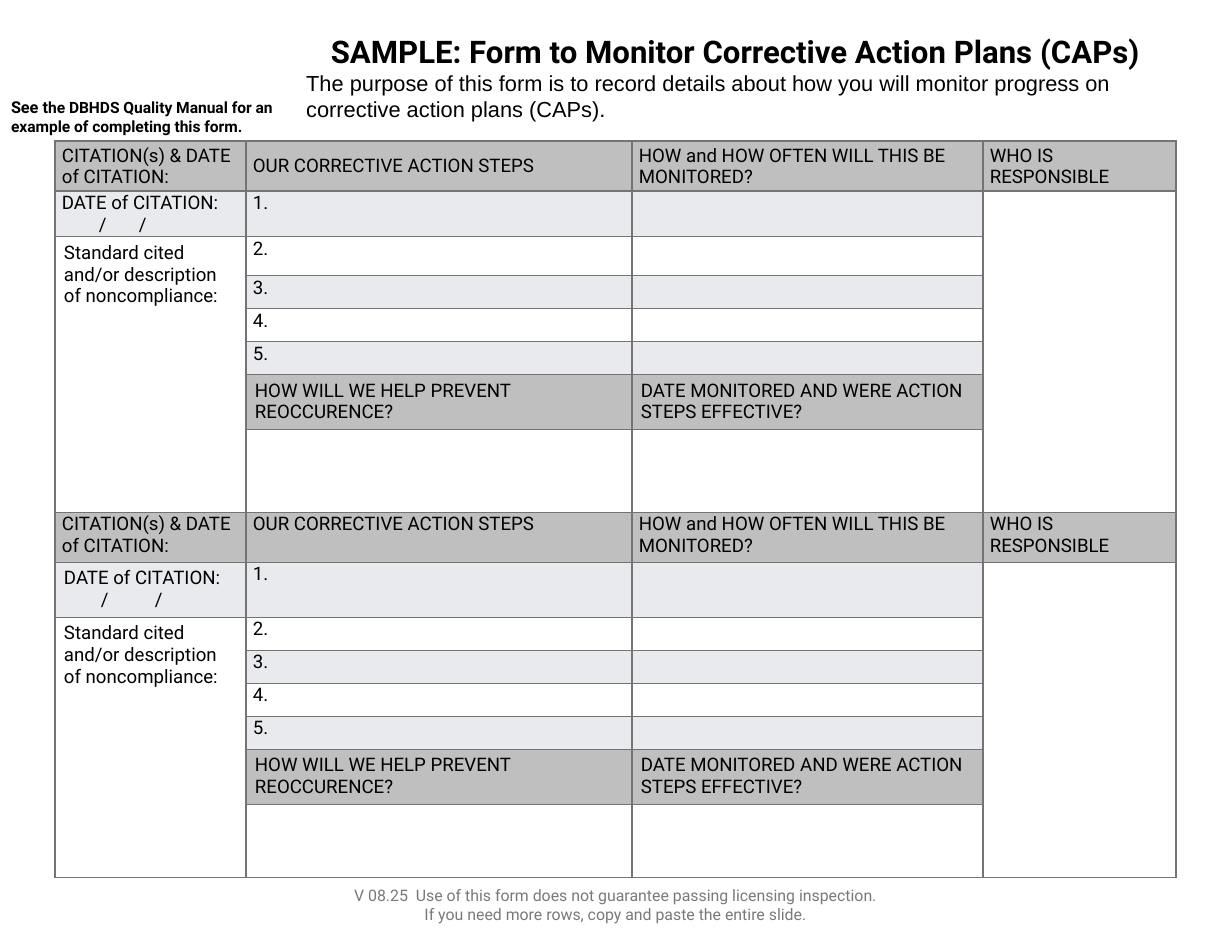
from lxml.etree import SubElement
from pptx import Presentation
from pptx.dml.color import RGBColor
from pptx.enum.text import MSO_ANCHOR as Anchor, MSO_AUTO_SIZE as Auto, PP_ALIGN as Align
from pptx.oxml.ns import qn
from pptx.util import Pt

SCALE = 914400 / 112
BLACK = RGBColor(0x00, 0x00, 0x00)
WHITE = RGBColor(0xFF, 0xFF, 0xFF)
HEAD = RGBColor(0xBF, 0xBF, 0xBF)
BAND = RGBColor(0xE8, 0xEA, 0xED)
GREY = RGBColor(0x79, 0x79, 0x79)
EDGE = RGBColor(0x74, 0x74, 0x74)

COLS = [191, 386, 351, 193]
# Header, five steps, prevention header, blank row
BLOCKS = [[50, 45, 39, 33, 33, 33, 54, 83], [50, 53, 33, 33, 33, 33, 55, 73]]
HEADERS = ["CITATION(s) & DATE of CITATION:", "OUR CORRECTIVE ACTION STEPS",
           "HOW and HOW OFTEN WILL THIS BE MONITORED?", "WHO IS RESPONSIBLE"]
CHECKS = ["HOW WILL WE HELP PREVENT REOCCURENCE?",
          "DATE MONITORED AND WERE ACTION STEPS EFFECTIVE?"]
TIGHT = (7, 1, 7, 0)
LOOSE = (9, 5, 9, 5)


def px(n):
    return int(n * SCALE)


def style(para, size, color=BLACK, bold=False, name="Roboto", align=Align.LEFT):
    para.alignment = align
    font = para.font
    font.size, font.bold, font.name = Pt(size), bold, name
    font.color.rgb = color


def add_tabs(para, stops):
    tabs = SubElement(para._p.get_or_add_pPr(), qn("a:tabLst"))
    for stop in stops:
        SubElement(tabs, qn("a:tab"), pos=str(px(stop)), algn="l")


def add_title(slide, x, y, w, h):
    title = slide.shapes.title
    title.left, title.top, title.width, title.height = map(px, (x, y, w, h))
    frame = title.text_frame
    frame.word_wrap = True
    frame.auto_size = Auto.NONE
    frame.vertical_anchor = Anchor.TOP
    head = frame.paragraphs[0]
    head.text = "SAMPLE: Form to Monitor Corrective Action Plans (CAPs)"
    style(head, 20, bold=True, align=Align.CENTER)
    aim = frame.add_paragraph()
    aim.text = ("The purpose of this form is to record details about how you will "
                "monitor progress on corrective action plans (CAPs).")
    style(aim, 14, name="Arial")


def add_box(slide, x, y, w, h):
    frame = slide.shapes.add_textbox(*map(px, (x, y, w, h))).text_frame
    frame.word_wrap = True
    return frame


def add_note(slide, x, y, w, h):
    para = add_box(slide, x, y, w, h).paragraphs[0]
    style(para, 10, bold=True)
    start = para.add_run()
    start.text = "See t"
    start.font.size = Pt(10.5)
    para.add_run().text = "he DBHDS Quality Manual for an example of completing this form."


def add_footer(slide, x, y, w, h):
    frame = add_box(slide, x, y, w, h)
    frame.vertical_anchor = Anchor.MIDDLE
    frame.text = ("V 08.25  Use of this form does not guarantee passing licensing inspection.\n"
                  "If you need more rows, copy and paste the entire slide.")
    for para in frame.paragraphs:
        style(para, 10.2, GREY, align=Align.CENTER)


def set_inset(cell, inset):
    left, top, right, bottom = map(px, inset)
    cell.margin_left, cell.margin_top = left, top
    cell.margin_right, cell.margin_bottom = right, bottom


def prepare(cell, fill):
    """Give a cell its border, fill, insets and the text size it has when empty."""
    props = cell._tc.get_or_add_tcPr()
    for side in ("lnL", "lnR", "lnT", "lnB"):
        line = SubElement(props, qn("a:" + side), w=str(Pt(1)))
        solid = SubElement(line, qn("a:solidFill"))
        SubElement(solid, qn("a:srgbClr"), val=str(EDGE))
    cell.fill.solid()
    cell.fill.fore_color.rgb = fill
    set_inset(cell, TIGHT)
    cell.text_frame.paragraphs[0]._p.get_or_add_endParaRPr().set("sz", "1200")


def write(cell, text, inset=TIGHT, stops=()):
    set_inset(cell, inset)
    cell.text_frame.text = text
    for para in cell.text_frame.paragraphs:
        if "\t" in para.text:
            add_tabs(para, stops)
        style(para, 12)


def fill_block(grid, top, anchor, inset, stops):
    """Fill the eight rows of one citation, from row top."""
    fills = [HEAD, BAND, WHITE, BAND, WHITE, BAND, HEAD, WHITE]
    for row, fill in enumerate(fills):
        for col in range(len(COLS)):
            side = (col == 0 and row > 1) or (col == 3 and row > 0)
            prepare(grid.cell(top + row, col), WHITE if side else fill)
    for col, text in enumerate(HEADERS):
        cell = grid.cell(top, col)
        write(cell, text)
        cell.vertical_anchor = anchor
    for step in range(1, 6):
        write(grid.cell(top + step, 1), f"{step}.")
    for col, text in enumerate(CHECKS, 1):
        write(grid.cell(top + 6, col), text, LOOSE)
    write(grid.cell(top + 1, 0), "DATE of CITATION:\n\t/\t/", inset, stops)
    cited = grid.cell(top + 2, 0)
    write(cited, "Standard cited and/or description of noncompliance:", LOOSE)
    cited.merge(grid.cell(top + 7, 0))
    grid.cell(top + 1, 3).merge(grid.cell(top + 7, 3))


def add_form(slide, x, y):
    rows = sum(BLOCKS, [])
    box = map(px, (x, y, sum(COLS), sum(rows)))
    grid = slide.shapes.add_table(len(rows), len(COLS), *box).table
    grid.first_row = grid.horz_banding = False
    for col, width in zip(grid.columns, COLS):
        col.width = px(width)
    for row, height in zip(grid.rows, rows):
        row.height = px(height)
    fill_block(grid, 0, Anchor.MIDDLE, TIGHT, (37, 77))
    fill_block(grid, len(BLOCKS[0]), Anchor.TOP, LOOSE, (37, 91))


def main():
    deck = Presentation()
    deck.slide_width, deck.slide_height = px(1232), px(952)
    slide = deck.slides.add_slide(deck.slide_layouts[5])
    add_title(slide, 295, 27, 881, 102)
    add_note(slide, 0, 92, 296, 50)
    add_form(slide, 55, 141)
    add_footer(slide, 205, 884, 821, 41)
    deck.save("out.pptx")


if __name__ == "__main__":
    main()
